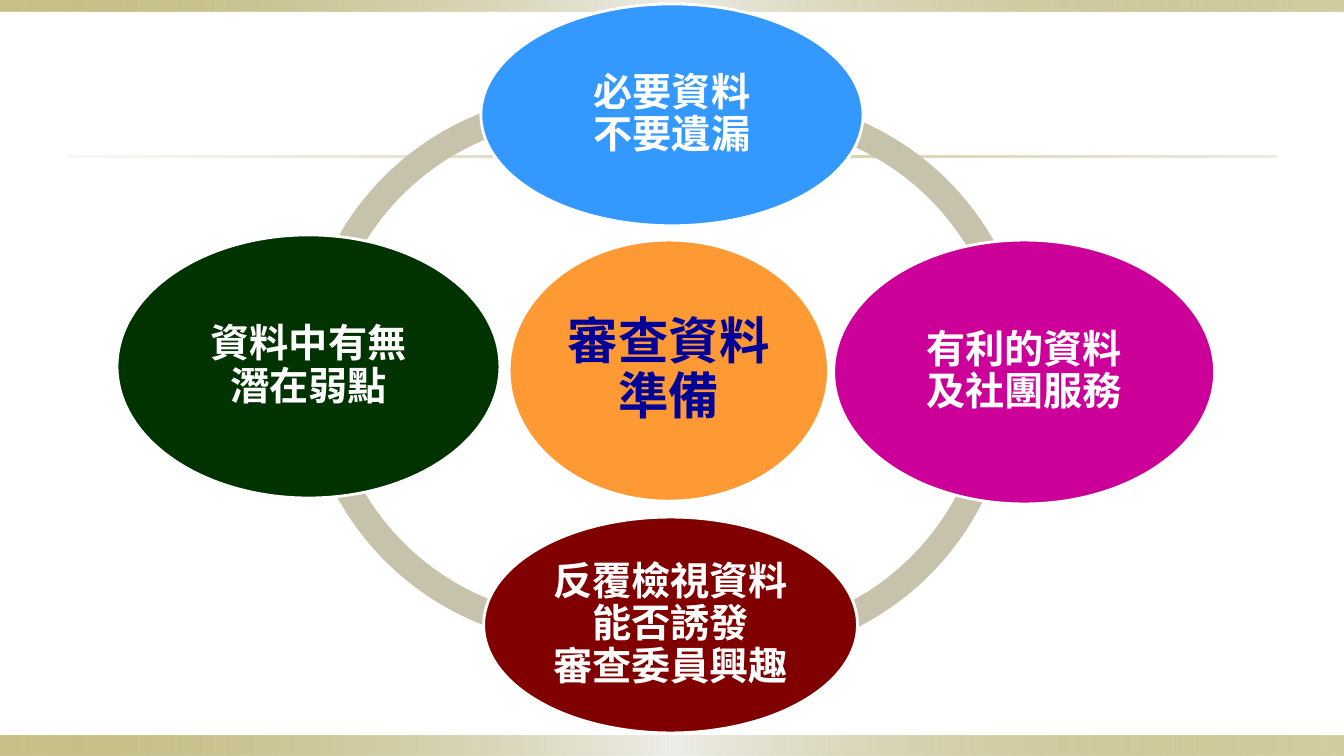
from lxml.etree import SubElement
from pptx import Presentation
from pptx.dml.color import RGBColor
from pptx.enum.shapes import MSO_SHAPE
from pptx.enum.text import MSO_ANCHOR, PP_ALIGN
from pptx.oxml.ns import qn
from pptx.util import Cm, Pt

COLORS = {
    "olive": "918415", "pale": "EEEDE8", "sand": "DCD9CC", "ring": "C7C2AC",
    "white": "FFFFFF", "navy": "000099", "orange": "FF9933", "blue": "3399FF",
    "magenta": "CC0099", "maroon": "800000", "green": "003300",
}
CJK_FONT = "Noto Sans CJK TC"
RING_SIZE = 14.27
RING_THICKNESS = 0.046


def add_plain_shape(kind, box, color):
    """Add a filled shape without outline or shadow; box is in centimetres."""
    shape = slide.shapes.add_shape(kind, *[Cm(length) for length in box])
    shape.shadow.inherit = False
    shape.fill.solid()
    shape.fill.fore_color.rgb = RGBColor.from_string(COLORS[color])
    shape.line.fill.background()
    return shape


def write_text(shape, text, size=28, color="white", font=CJK_FONT, inset=0.1):
    frame = shape.text_frame
    frame.word_wrap = True
    frame.vertical_anchor = MSO_ANCHOR.MIDDLE
    frame.margin_left = frame.margin_right = Cm(inset)
    frame.margin_top = frame.margin_bottom = Cm(inset)
    paragraph = frame.paragraphs[0]
    paragraph.text = text
    paragraph.alignment = PP_ALIGN.CENTER
    paragraph.line_spacing = 0.9
    for run in paragraph.runs:
        run.font.size = Pt(size)
        run.font.bold = True
        run.font.name = font
        run.font.color.rgb = RGBColor.from_string(COLORS[color])
        east_asian = SubElement(run.font._element, qn("a:ea"))
        east_asian.set("typeface", CJK_FONT)


presentation = Presentation()
presentation.slide_width = Cm(33.87)
presentation.slide_height = Cm(19.05)
slide = presentation.slides.add_slide(presentation.slide_layouts[6])

# Decorative bands: box, then (position %, colour, opacity %) stops
band_stops = [(0, "olive", 50), (50, "pale", 100), (100, "olive", 40)]
rule_stops = [(0, "sand", 20), (50, "olive", 40), (100, "sand", 50)]
bands = [
    ((0, 18.54, 33.87, 0.51), band_stops),
    ((0, 0, 33.87, 0.3), band_stops),
    ((1.7, 3.91, 30.48, 0.05), rule_stops),
]
for box, stops in bands:
    band = add_plain_shape(MSO_SHAPE.RECTANGLE, box, "olive")
    band.fill.gradient()
    band.fill.gradient_angle = 0
    stop_list = band._element.spPr.find(qn("a:gradFill")).find(qn("a:gsLst"))
    for old_stop in list(stop_list):
        stop_list.remove(old_stop)
    for position, color, opacity in stops:
        stop = SubElement(stop_list, qn("a:gs"), pos=str(position * 1000))
        rgb = SubElement(stop, qn("a:srgbClr"), val=COLORS[color])
        SubElement(rgb, qn("a:alpha"), val=str(opacity * 1000))

# Ring quarters: left, top, start and end adjustments
ring_arcs = [
    (7.59, 2.36, 109.414, 173.012),
    (7.62, 1.96, 43.271, 107.412),
    (11.25, 2.31, 1.616, 63.736),
    (11.71, 2.46, 152.539, 214.867),
]
for left, top, start, end in ring_arcs:
    arc = add_plain_shape(MSO_SHAPE.BLOCK_ARC, (left, top, RING_SIZE, RING_SIZE), "ring")
    for index, value in enumerate((start, end, RING_THICKNESS)):
        arc.adjustments[index] = value

center_format = {"size": 36, "color": "navy", "font": "Times New Roman", "inset": 0.13}
topics = [
    ("審查資料準備", (12.83, 6.05, 8.05, 6.58), "orange", center_format),
    ("必要資料\n不要遺漏", (12.12, 0.1, 9.63, 5.59), "blue", {}),
    ("有利的資料\n及社團服務", (21.01, 6.05, 9.6, 6.65), "magenta", {}),
    ("反覆檢視資料\n能否誘發\n審查委員興趣", (12.19, 13.03, 9.42, 5.44), "maroon", {}),
    ("資料中有無\n潛在弱點", (2.95, 5.92, 9.65, 6.63), "green", {}),
]
for text, box, color, text_format in topics:
    topic = add_plain_shape(MSO_SHAPE.OVAL, box, color)
    topic.line.color.rgb = RGBColor.from_string(COLORS["white"])
    topic.line.width = Pt(2)
    write_text(topic, text, **text_format)

presentation.save("out.pptx")
